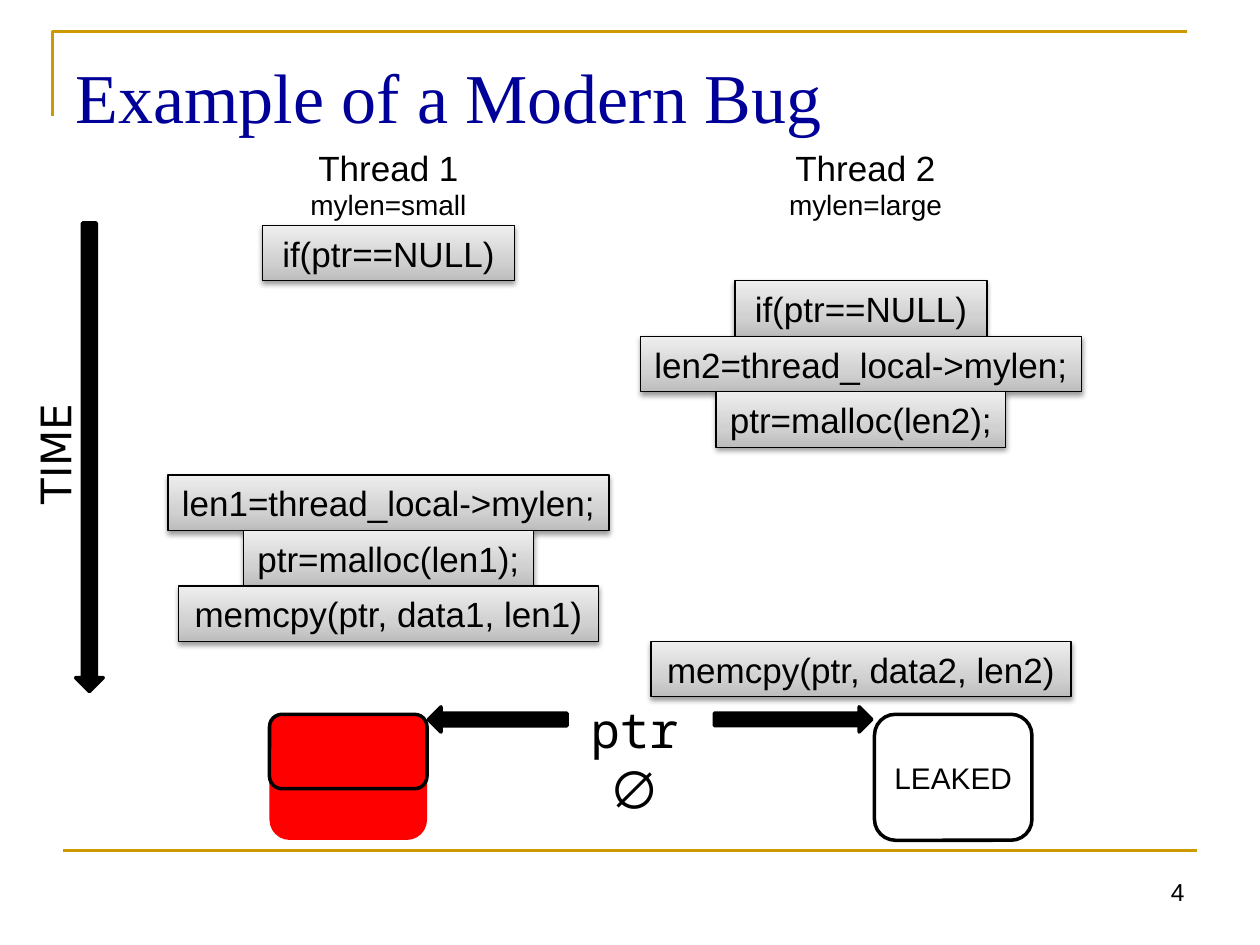
from copy import deepcopy
from dataclasses import dataclass

from lxml import etree
from pptx import Presentation
from pptx.dml.color import RGBColor
from pptx.enum import shapes, text
from pptx.oxml.ns import qn
from pptx.util import Pt

KIND = shapes.MSO_SHAPE
ALIGN = text.PP_ALIGN
ANCHOR = text.MSO_ANCHOR


@dataclass(frozen=True)
class Theme:
    sans: str = "Arial"
    serif: str = "Times New Roman"
    mono: str = "Noto Sans Mono"
    time: str = "DejaVu Sans"
    black: str = "000000"
    white: str = "FFFFFF"
    red: str = "FF0000"
    gold: str = "CC9900"
    navy: str = "000099"
    grays: tuple = ((0, "BDBDBD"), (0.35, "D1D1D1"), (1, "EEEEEE"))
    title: int = 40
    ptr: int = 28
    axis: int = 24
    code: int = 20
    leak: int = 17
    note: int = 16
    page: int = 14


THEME = Theme()

LEFT_MID, RIGHT_MID = 222, 492
ROW_TOP, ROW_H = 128.8, 31.7
STEPS = [
    (LEFT_MID, 0, 144, "if(ptr==NULL)"),
    (RIGHT_MID, 1, 144, "if(ptr==NULL)"),
    (RIGHT_MID, 2, 252, "len2=thread_local->mylen;"),
    (RIGHT_MID, 3, 165.6, "ptr=malloc(len2);"),
    (LEFT_MID, 4.5, 252, "len1=thread_local->mylen;"),
    (LEFT_MID, 5.5, 165.6, "ptr=malloc(len1);"),
    (LEFT_MID, 6.5, 240, "memcpy(ptr, data1, len1)"),
    (RIGHT_MID, 7.5, 240, "memcpy(ptr, data2, len2)"),
]
HEADS = [
    (LEFT_MID, "Thread 1", "mylen=small"),
    (494.6, "Thread 2", "mylen=large"),
]


def rgb(color):
    return RGBColor.from_string(color)


def write(shape, words, size, font=THEME.sans, color=THEME.black,
          align=ALIGN.CENTER, anchor=ANCHOR.MIDDLE):
    frame = shape.text_frame
    frame.word_wrap = True
    frame.vertical_anchor = anchor
    frame.text = words
    para = frame.paragraphs[0]
    para.alignment = align
    run = para.runs[0].font
    run.size, run.name = Pt(size), font
    run.color.rgb = rgb(color)


def add_label(slide, box, words, size, **look):
    label = slide.shapes.add_textbox(*map(Pt, box))
    write(label, words, size, **look)
    return label


def add_block(slide, kind, box, fill, line=2):
    block = slide.shapes.add_shape(kind, *map(Pt, box))
    block.shadow.inherit = False
    if fill:
        block.fill.solid()
        block.fill.fore_color.rgb = rgb(fill)
    if line:
        block.line.width = Pt(line)
        block.line.color.rgb = rgb(THEME.black)
    else:
        block.line.fill.background()
    return block


def shade(block):
    block.fill.gradient()
    block.fill.gradient_angle = 90
    props = block._element.spPr
    stops = props.find(".//" + qn("a:gsLst"))
    stops.append(deepcopy(stops[-1]))
    for stop, (place, color) in zip(block.fill.gradient_stops, THEME.grays):
        stop.position = place
        stop.color.rgb = rgb(color)
    glow = etree.SubElement(
        props.find(qn("a:effectLst")), qn("a:outerShdw"),
        blurRad=str(Pt(3.1)), dist=str(Pt(1.6)), dir="5400000", rotWithShape="0")
    tint = etree.SubElement(glow, qn("a:srgbClr"), val=THEME.black)
    etree.SubElement(tint, qn("a:alpha"), val="38000")


def add_step(slide, mid, row, width, words):
    box = (mid - width / 2, ROW_TOP + row * ROW_H, width, ROW_H)
    step = add_block(slide, KIND.RECTANGLE, box, None, 0.75)
    shade(step)
    step.text_frame.margin_left = step.text_frame.margin_right = Pt(4)
    write(step, words, THEME.code)


def add_frame(slide):
    path = slide.shapes.build_freeform(Pt(30.2), Pt(66.2))
    path.add_line_segments([(Pt(30.2), Pt(18)), (Pt(678.2), Pt(18))], close=False)
    edge = path.convert_to_shape()
    edge.shadow.inherit = False
    edge.fill.background()
    rule = slide.shapes.add_connector(
        shapes.MSO_CONNECTOR.STRAIGHT, Pt(36), Pt(486), Pt(684), Pt(486))
    etree.SubElement(rule._element.spPr, qn("a:effectLst"))
    for item in (edge, rule):
        item.line.width = Pt(1.5)
        item.line.color.rgb = rgb(THEME.gold)


def set_title(slide, words):
    title = slide.shapes.title
    title.left, title.top, title.width, title.height = map(Pt, (36, 21.6, 648, 50.4))
    frame = title.text_frame
    frame.auto_size = text.MSO_AUTO_SIZE.NONE
    frame.margin_top, frame.margin_bottom = Pt(9), 0
    write(title, words, THEME.title, THEME.serif, THEME.navy, ALIGN.LEFT, ANCHOR.TOP)


def add_time(slide):
    add_block(slide, KIND.DOWN_ARROW, (43.2, 127.4, 15.8, 267.8), THEME.black)
    label = add_label(slide, (-18.8, 241.5, 100, 36), "TIME", THEME.axis,
                      font=THEME.time)
    label.rotation = 270


def add_heap(slide):
    add_block(slide, KIND.ROUNDED_RECTANGLE, (154, 411, 90, 69), THEME.red, 0)
    add_block(slide, KIND.ROUNDED_RECTANGLE, (154, 408.2, 90, 42.5), THEME.red)
    leak = add_block(slide, KIND.ROUNDED_RECTANGLE, (499.7, 408.2, 90, 72), THEME.white)
    write(leak, "LEAKED", THEME.leak)
    add_block(slide, KIND.RIGHT_ARROW, (408.2, 403.9, 90, 14.4), THEME.black)
    back = add_block(slide, KIND.RIGHT_ARROW, (244.8, 403.9, 79.2, 14.4), THEME.black)
    back.rotation = 180
    add_label(slide, (314.6, 396, 96, 41), "ptr", THEME.ptr, font=THEME.mono)
    add_label(slide, (338.4, 430.6, 48, 41), "∅", THEME.ptr, font=THEME.mono)


def main():
    deck = Presentation()
    deck.slide_width, deck.slide_height = Pt(720), Pt(540)
    slide = deck.slides.add_slide(deck.slide_layouts[5])
    add_frame(slide)
    set_title(slide, "Example of a Modern Bug")
    add_label(slide, (516.2, 497.5, 167.8, 36.7), "4", THEME.page,
              align=ALIGN.RIGHT, anchor=ANCHOR.TOP)
    for mid, name, note in HEADS:
        add_label(slide, (mid - 54, 79.9, 108, 31.7), name, THEME.code)
        add_label(slide, (mid - 72, 103.7, 144, 26.6), note, THEME.note)
    for step in STEPS:
        add_step(slide, *step)
    add_time(slide)
    add_heap(slide)
    deck.save("out.pptx")


if __name__ == "__main__":
    main()
